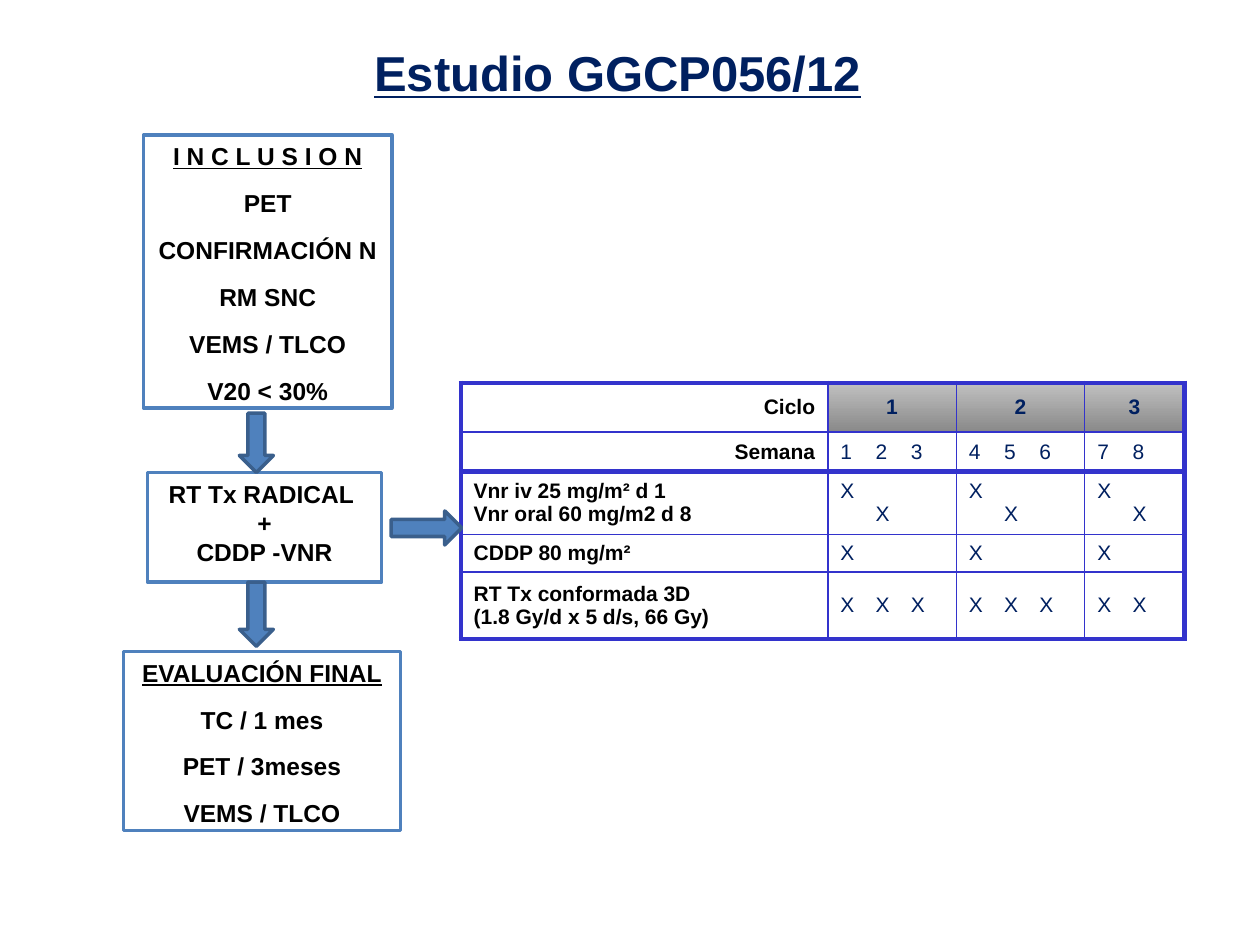
from lxml.etree import SubElement
from pptx import Presentation
from pptx.dml.color import RGBColor
from pptx.enum.shapes import MSO_SHAPE
from pptx.enum.text import MSO_ANCHOR, MSO_AUTO_SIZE, PP_ALIGN
from pptx.oxml import parse_xml
from pptx.oxml.ns import nsdecls, qn
from pptx.util import Inches, Pt

NAVY = RGBColor(0x00, 0x20, 0x60)
BLACK = RGBColor(0x00, 0x00, 0x00)
WHITE = RGBColor(0xFF, 0xFF, 0xFF)
BLUE = RGBColor(0x4F, 0x81, 0xBD)
DARK_BLUE = RGBColor(0x3A, 0x5F, 0x8C)
GRID_BLUE = RGBColor(0x33, 0x33, 0xCC)
LIGHT_GREY = RGBColor(0xC0, 0xC0, 0xC0)
MID_GREY = RGBColor(0x89, 0x89, 0x89)

# Content
TITLE = "Estudio GGCP056/12"
# (left, top, width, height), underlined heading, space after, lines
STEPS = [
    ((1.14, 1.07, 1.97, 2.17), True, 10,
     ["I N C L U S I O N", "PET", "CONFIRMACIÓN N", "RM SNC",
      "VEMS / TLCO", "V20 < 30%"]),
    ((1.17, 3.75, 1.86, 0.87), False, 0,
     ["RT Tx RADICAL ", "+", "CDDP -VNR"]),
    ((0.98, 5.17, 2.2, 1.42), True, 10,
     ["EVALUACIÓN FINAL", "TC / 1 mes", "PET / 3meses", "VEMS / TLCO"]),
]
# (left, top, width, height), rotation
ARROWS = [
    ((1.9, 3.28, 0.27, 0.47), 0),
    ((1.9, 4.62, 0.27, 0.51), 0),
    ((3.25, 3.91, 0.27, 0.56), 270),
]
# A line break starts a paragraph; each tab moves one week to the right
SCHEDULE = [
    ["Ciclo", "1", "2", "3"],
    ["Semana", "1\t2\t3", "4\t5\t6", "7\t8"],
    ["Vnr iv 25 mg/m² d 1\nVnr oral 60 mg/m2 d 8"] + ["X\n\tX"] * 3,
    ["CDDP 80 mg/m²", "X", "X", "X"],
    ["RT Tx conformada 3D\n(1.8 Gy/d x 5 d/s, 66 Gy)",
     "X\tX\tX", "X\tX\tX", "X\tX"],
]
COLUMN_WIDTHS = [2.91, 1.02, 1.02, 0.79]
ROW_HEIGHTS = [0.39, 0.31, 0.47, 0.29, 0.53]
WEEK_WIDTH = 0.28
THIN, THICK = 1, 3


def write(para, text, color, **formats):
    span = para.add_run()
    span.text = text
    span.font.color.rgb = color
    for name, value in {"name": "Arial", **formats}.items():
        setattr(span.font, name, value)


def add_shape(preset, place, fill, line):
    shape = slide.shapes.add_shape(preset, *map(Inches, place))
    shape.shadow.inherit = False
    shape.fill.solid()
    shape.fill.fore_color.rgb = fill
    shape.line.color.rgb = line
    shape.line.width = Pt(2)
    return shape


def add_week_tabs(para):
    tabs = SubElement(para._p.get_or_add_pPr(), qn("a:tabLst"))
    for week in (1, 2):
        SubElement(tabs, qn("a:tab"), pos=str(Inches(week * WEEK_WIDTH)), algn="l")


def set_borders(cell, widths):
    properties = cell._tc.get_or_add_tcPr()
    for position, (side, width) in enumerate(zip("LRTB", widths)):
        properties.insert(position, parse_xml(
            f'<a:ln{side} {nsdecls("a")} w="{Pt(width)}"><a:solidFill>'
            f'<a:srgbClr val="{GRID_BLUE}"/></a:solidFill></a:ln{side}>'))


def fill_cell(cell, shaded):
    if not shaded:
        cell.fill.background()
        return
    cell.fill.gradient()
    cell.fill.gradient_angle = 270
    for stop, color in zip(cell.fill.gradient_stops, (LIGHT_GREY, MID_GREY)):
        stop.color.rgb = color


deck = Presentation()
deck.slide_width, deck.slide_height = Inches(10), Inches(7.5)
slide = deck.slides.add_slide(deck.slide_layouts[5])

# Title
title = slide.shapes.title
for name, value in zip(("left", "top", "width", "height"), (2.87, 0.29, 4.11, 0.57)):
    setattr(title, name, Inches(value))
frame = title.text_frame
for name, value in {"word_wrap": False, "vertical_anchor": MSO_ANCHOR.TOP,
                    "auto_size": MSO_AUTO_SIZE.SHAPE_TO_FIT_TEXT}.items():
    setattr(frame, name, value)
frame.paragraphs[0].alignment = PP_ALIGN.LEFT
write(frame.paragraphs[0], TITLE, NAVY, size=Pt(28), bold=True, underline=True)

# Treatment schedule
last_row, last_column = len(ROW_HEIGHTS) - 1, len(COLUMN_WIDTHS) - 1
table = slide.shapes.add_table(
    len(ROW_HEIGHTS), len(COLUMN_WIDTHS), Inches(3.66), Inches(3.04),
    Inches(sum(COLUMN_WIDTHS)), Inches(sum(ROW_HEIGHTS))).table
table.first_row = table.horz_banding = False
for column, width in zip(table.columns, COLUMN_WIDTHS):
    column.width = Inches(width)
for row, height in zip(table.rows, ROW_HEIGHTS):
    row.height = Inches(height)

for r, texts in enumerate(SCHEDULE):
    for c, text in enumerate(texts):
        cell = table.cell(r, c)
        cell.vertical_anchor = MSO_ANCHOR.MIDDLE
        is_label, is_cycle = c == 0, r == 0 and c > 0
        fill_cell(cell, is_cycle)
        # Outer frame and the rule under the headings are thick
        thick_sides = (c == 0, c == last_column, r in (0, 2), r in (1, last_row))
        set_borders(cell, [THICK if thick else THIN for thick in thick_sides])
        for n, line in enumerate(text.split("\n")):
            para = cell.text_frame.paragraphs[0] if n == 0 else cell.text_frame.add_paragraph()
            if is_cycle:
                para.alignment = PP_ALIGN.CENTER
            elif is_label:
                para.alignment = PP_ALIGN.RIGHT if r < 2 else PP_ALIGN.LEFT
            else:
                para.alignment = PP_ALIGN.LEFT
                add_week_tabs(para)
            write(para, line, BLACK if is_label else NAVY,
                  size=Pt(12), bold=is_label or is_cycle)

# Flow boxes
for place, has_heading, space_after, lines in STEPS:
    box = add_shape(MSO_SHAPE.RECTANGLE, place, WHITE, BLUE)
    frame = box.text_frame
    frame.word_wrap = True
    frame.vertical_anchor = MSO_ANCHOR.TOP
    for n, line in enumerate(lines):
        para = frame.paragraphs[0] if n == 0 else frame.add_paragraph()
        para.alignment = PP_ALIGN.CENTER
        para.space_after = Pt(space_after)
        write(para, line, BLACK, size=Pt(14), bold=True,
              underline=has_heading and n == 0)

# Flow arrows
for place, rotation in ARROWS:
    arrow = add_shape(MSO_SHAPE.DOWN_ARROW, place, BLUE, DARK_BLUE)
    arrow.rotation = rotation

deck.save("out.pptx")
